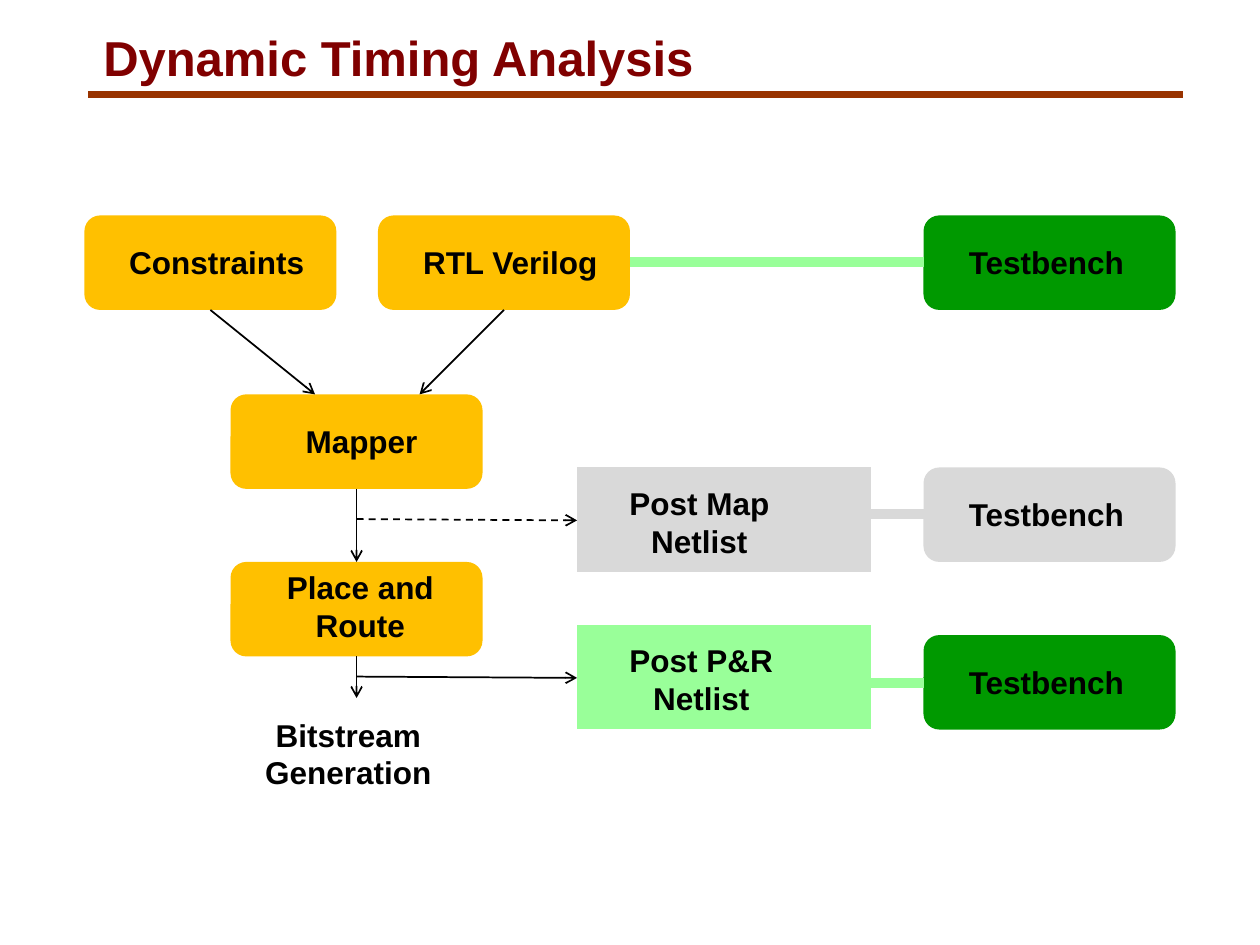
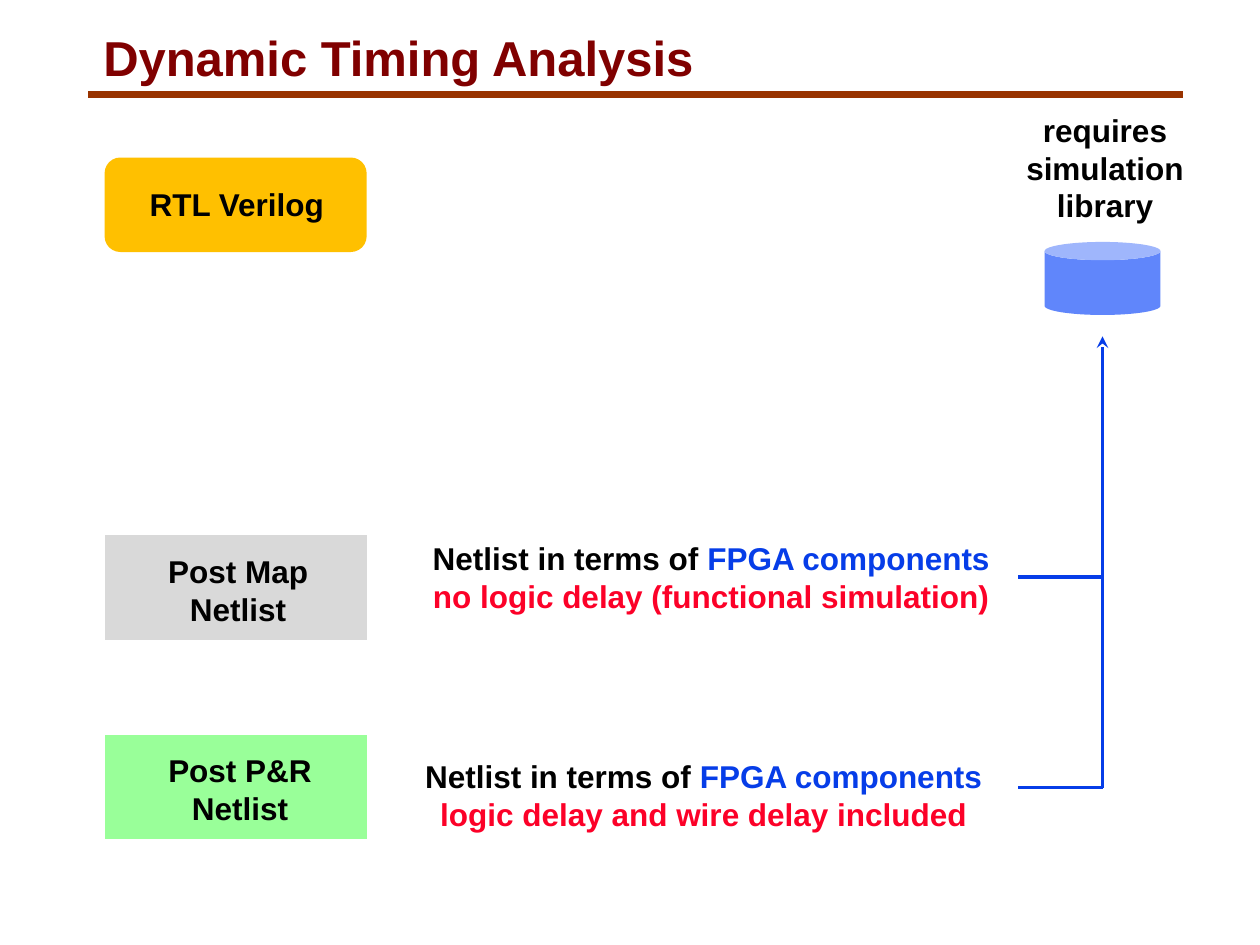
from typing import NamedTuple

import lxml.etree
import pptx
import pptx.dml.color
import pptx.enum.dml
import pptx.enum.shapes
import pptx.enum.text
import pptx.oxml.ns
import pptx.util
from pptx.util import Inches

Shape = pptx.enum.shapes.MSO_SHAPE
Align = pptx.enum.text.PP_ALIGN

COLORS = {
    "title": "800000", "rule": "993300", "text": "000000",
    "design": "FFC000", "testbench": "009900", "map": "D9D9D9",
    "route": "99FF99", "library": "6086FB", "fpga": "063DE8", "delay": "FC0128",
}
FONT = "Arial"
LINE_HEIGHT = 0.305
STEP_HEIGHT = 0.75
NETLIST_HEIGHT = 0.83
BAR_HEIGHT = 0.08


class Node(NamedTuple):
    """A filled box and its label, whose place is relative to the box."""
    text: str
    left: float
    top: float
    width: float
    height: float
    color: str
    preset: Shape
    label_dx: float
    label_dy: float
    label_width: float


class Bar(NamedTuple):
    left: float
    top: float
    width: float
    color: str


class Line(NamedTuple):
    start: tuple[float, float]
    end: tuple[float, float]
    color: str = "text"
    weight: float = 1
    head: str = ""
    dashed: bool = False


class Note(NamedTuple):
    left: float
    top: float
    delay: str


def step(text: str, left: float, top: float, label_width: float, *, color: str = "design",
         width: float = 2, label_dx: float = 0.25, label_dy: float = 0.17) -> Node:
    return Node(text, left, top, width, STEP_HEIGHT, color,
                Shape.FLOWCHART_ALTERNATE_PROCESS, label_dx, label_dy, label_width)


def netlist(stage: str, left: float, top: float, label_width: float, color: str,
            width: float, label_dx: float) -> Node:
    return Node(f"{stage}\nNetlist", left, top, width, NETLIST_HEIGHT, color,
                Shape.FLOWCHART_PROCESS, label_dx, 0.08, label_width)


def rgb(color: str) -> pptx.dml.color.RGBColor:
    return pptx.dml.color.RGBColor.from_string(COLORS[color])


def add_text(slide, text: str | list[list[tuple[str, str]]], left: float, top: float,
             width: float, *, height: float = 0, size: float = 18, color: str = "text",
             align: Align = Align.CENTER, inset: tuple[float, float] = (0.1, 0.05),
             spacing: float = 1) -> None:
    """Write text, or paragraphs made of (words, colour) pairs."""
    paragraphs = [[(row, color)] for row in text.split("\n")] if isinstance(text, str) else text
    height = height or 0.1 + LINE_HEIGHT * len(paragraphs)
    frame = slide.shapes.add_textbox(
        Inches(left), Inches(top), Inches(width), Inches(height)).text_frame
    frame.word_wrap = False
    frame.auto_size = pptx.enum.text.MSO_AUTO_SIZE.SHAPE_TO_FIT_TEXT
    frame.margin_left = frame.margin_right = Inches(inset[0])
    frame.margin_top = frame.margin_bottom = Inches(inset[1])
    for index, pieces in enumerate(paragraphs):
        paragraph = frame.add_paragraph() if index else frame.paragraphs[0]
        paragraph.alignment = align
        paragraph.line_spacing = spacing
        for words, piece_color in pieces:
            run = paragraph.add_run()
            run.text = words
            run.font.name = FONT
            run.font.size = pptx.util.Pt(size)
            run.font.bold = True
            run.font.color.rgb = rgb(piece_color)


def add_block(slide, preset: Shape, left: float, top: float, width: float,
              height: float, color: str) -> None:
    block = slide.shapes.add_shape(
        preset, Inches(left), Inches(top), Inches(width), Inches(height))
    block.shadow.inherit = False
    block.fill.solid()
    block.fill.fore_color.rgb = rgb(color)
    block.line.fill.background()


def add_node(slide, node: Node) -> None:
    add_block(slide, node.preset, node.left, node.top, node.width, node.height, node.color)
    add_text(slide, node.text, node.left + node.label_dx, node.top + node.label_dy,
             node.label_width)


def add_line(slide, line: Line) -> None:
    connector = slide.shapes.add_connector(
        pptx.enum.shapes.MSO_CONNECTOR.STRAIGHT,
        *(Inches(value) for value in (*line.start, *line.end)))
    connector.line.color.rgb = rgb(line.color)
    connector.line.width = pptx.util.Pt(line.weight)
    if line.dashed:
        connector.line.dash_style = pptx.enum.dml.MSO_LINE.DASH
    qn = pptx.oxml.ns.qn
    properties = connector.element.find(qn("p:spPr"))
    if line.head:
        lxml.etree.SubElement(properties.find(qn("a:ln")), qn("a:tailEnd"), type=line.head)
    lxml.etree.SubElement(properties, qn("a:effectLst"))


def add_titled_slide(deck):
    slide = deck.slides.add_slide(deck.slide_layouts[6])
    add_line(slide, Line((0.7, 0.75), (9.39, 0.75), "rule", 4.5))
    add_text(slide, "Dynamic Timing Analysis", 0.75, 0.25, 4.9, height=0.47, size=28,
             color="title", align=Align.LEFT, inset=(0.07, 0.03), spacing=0.87)
    return slide


def build_flow(deck) -> None:
    slide = add_titled_slide(deck)
    netlist_left, testbench_left, flow_x = 4.58, 7.33, 2.83
    nodes = [
        netlist("Post Map", netlist_left, 3.71, 1.32, "map", 2.33, 0.31),
        netlist("Post P&R", netlist_left, 4.96, 1.35, "route", 2.33, 0.31),
        step("Constraints", 0.67, 1.71, 1.6),
        step("RTL Verilog", 3, 1.71, 1.6),
        step("Mapper", 1.83, 3.13, 1.1, label_dx=0.49),
        step("Place and\nRoute", 1.83, 4.46, 1.38, label_dx=0.34, label_dy=0),
    ]
    nodes += [step("Testbench", testbench_left, top, 1.45, color=color)
              for top, color in ((1.71, "testbench"), (3.71, "map"), (5.04, "testbench"))]
    for node in nodes:
        add_node(slide, node)
    add_text(slide, "Bitstream\nGeneration", 2, 5.63, 1.53)

    for bar in (Bar(5, 2.04, 2.33, "route"), Bar(6.83, 4.04, 0.5, "map"),
                Bar(6.83, 5.38, 0.5, "route")):
        add_block(slide, Shape.FLOWCHART_PROCESS, bar.left, bar.top, bar.width,
                  BAR_HEIGHT, bar.color)

    for start, end in (((1.67, 2.46), (2.5, 3.13)), ((4, 2.46), (3.33, 3.13)),
                       ((flow_x, 3.88), (flow_x, 4.46)), ((flow_x, 5.21), (flow_x, 5.54))):
        add_line(slide, Line(start, end, head="arrow"))
    for y, dashed in ((4.12, True), (5.37, False)):
        add_line(slide, Line((flow_x, y), (netlist_left, y + 0.01), head="arrow", dashed=dashed))


def build_netlists(deck) -> None:
    slide = add_titled_slide(deck)
    left, width = 0.83, 2.08
    for node in (netlist("Post Map", left, 4.25, 1.32, "map", width, 0.4),
                 netlist("Post P&R", left, 5.83, 1.35, "route", width, 0.4),
                 step("RTL Verilog", left, 1.25, 1.6, width=width)):
        add_node(slide, node)

    for note in (Note(3.31, 4.23, "no logic delay (functional simulation)"),
                 Note(3.25, 5.96, "logic delay and wire delay included")):
        add_text(slide, [[("Netlist in terms of ", "text"), ("FPGA components", "fpga")],
                         [(note.delay, "delay")]], note.left, note.top, 4.67)

    add_block(slide, Shape.CAN, 8.29, 1.92, 0.92, 0.58, "library")
    add_text(slide, "requires\nsimulation\nlibrary", 8.04, 0.83, 1.46)
    trunk_x, branch_ys = 8.75, (4.58, 6.25)
    for y in branch_ys:
        add_line(slide, Line((8.08, y), (trunk_x, y), "fpga", 2.25))
    add_line(slide, Line((trunk_x, branch_ys[-1]), (trunk_x, 2.67), "fpga", 2.25, "stealth"))


def main() -> None:
    deck = pptx.Presentation()
    deck.slide_width, deck.slide_height = Inches(10), Inches(7.5)
    build_flow(deck)
    build_netlists(deck)
    deck.save("out.pptx")


if __name__ == "__main__":
    main()
